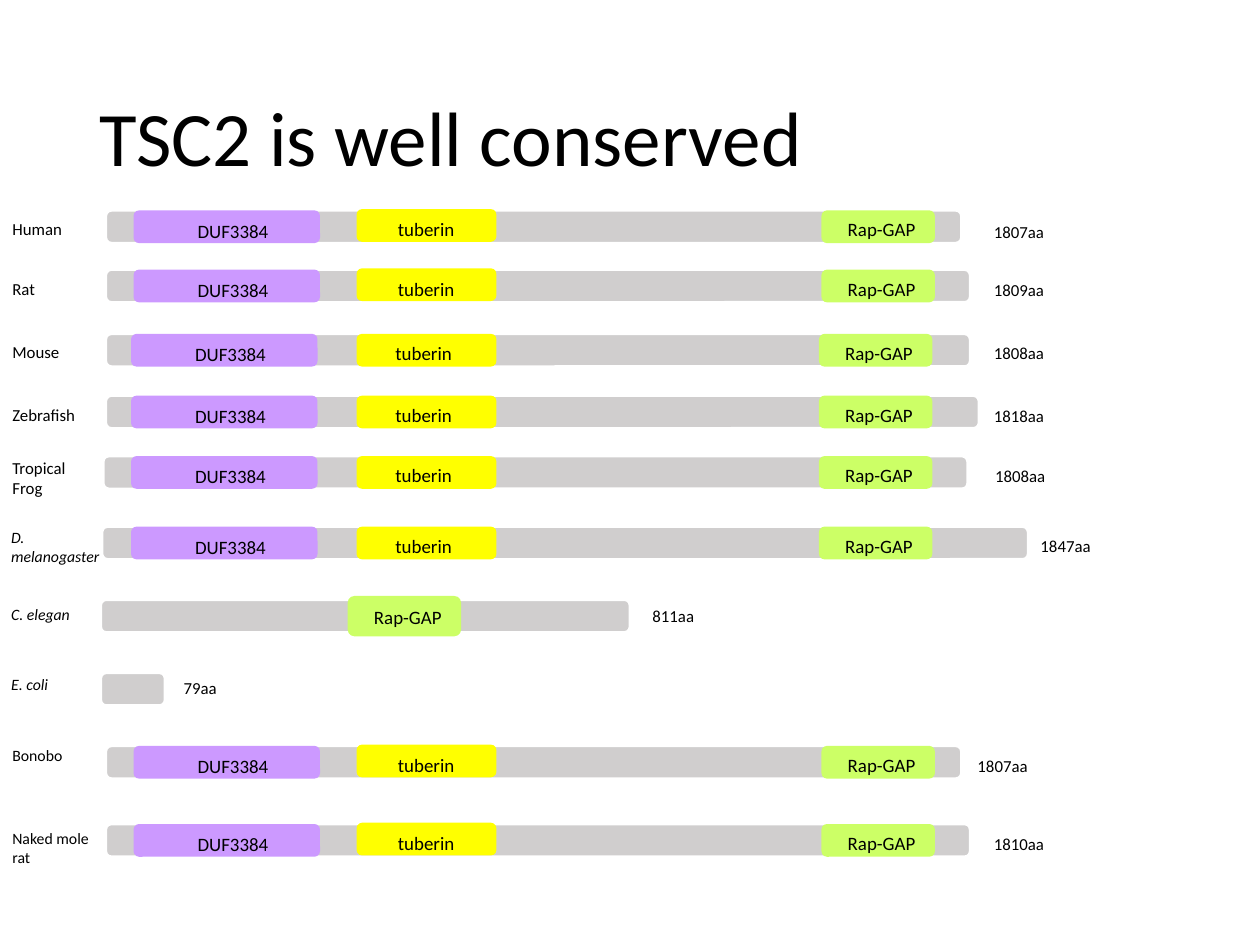
from dataclasses import dataclass

from pptx import Presentation
from pptx.dml.color import RGBColor
from pptx.enum.shapes import MSO_SHAPE
from pptx.enum.text import MSO_ANCHOR, MSO_AUTO_SIZE
from pptx.util import Inches, Pt

COLORS = {"bar": "D0CECE", "duf": "CC99FF", "tuberin": "FFFF00",
          "rap": "CCFF66", "outline": "FFFFFF", "text": "000000"}
BAR_H = 0.26


@dataclass
class Domain:
    name: str
    color: str
    left: float
    width: float
    text_dx: float
    text_dy: float
    moves: bool = True


@dataclass
class Protein:
    species: str
    length: str
    left: float
    top: float
    width: float
    label_top: float
    length_left: float
    length_top: float
    shift: float = 0
    label_size: float = 9.6
    italic: bool = False
    conserved: bool = True


DUF = Domain("DUF3384", "duf", 1.06, 1.48, 0.41, 0.02)
TUBERIN = Domain("tuberin", "tuberin", 2.83, 1.11, 0.23, 0.01, False)
RAP_GAP = Domain("Rap-GAP", "rap", 6.52, 0.9, 0.11, 0.01)

PROTEINS = [
    Protein("Human", "1807aa", 0.84, 1.67, 6.79, 1.69, 7.79, 1.71),
    Protein("Rat", "1809aa", 0.84, 2.14, 6.86, 2.16, 7.79, 2.17),
    Protein("Mouse", "1808aa", 0.84, 2.65, 6.86, 2.66, 7.79, 2.67, -0.02),
    Protein("Zebrafish", "1818aa", 0.84, 3.14, 6.93, 3.16, 7.79, 3.17, -0.02),
    Protein("Tropical\nFrog", "1808aa", 0.82, 3.62, 6.86, 3.58, 7.8, 3.65, -0.02),
    Protein("D. melanogaster", "1847aa", 0.81, 4.18, 7.35, 4.14, 8.16, 4.2,
            -0.02, 9, True),
    Protein("C. elegan", "811aa", 0.8, 4.76, 4.2, 4.75, 5.08, 4.76,
            0, 9, True, False),
    Protein("E. coli", "79aa", 0.8, 5.34, 0.51, 5.31, 1.36, 5.33,
            0, 9, True, False),
    Protein("Bonobo", "1807aa", 0.84, 5.92, 6.79, 5.87, 7.66, 5.95, 0, 9),
    Protein("Naked mole rat", "1810aa", 0.84, 6.54, 6.86, 6.53, 7.79, 6.57, 0, 9),
]


def add_text(s, text: str, left: float, top: float, width: float, height: float,
             size: float, italic: bool = False):
    sp = s.shapes.add_textbox(Inches(left), Inches(top), Inches(width), Inches(height))
    tf = sp.text_frame
    tf.word_wrap = True
    tf.auto_size = MSO_AUTO_SIZE.SHAPE_TO_FIT_TEXT
    tf.text = text
    font_format = {"name": "Calibri", "size": Pt(size), "italic": italic}
    for p in tf.paragraphs:
        for r in p.runs:
            for key, value in font_format.items():
                setattr(r.font, key, value)
            r.font.color.rgb = RGBColor.from_string(COLORS["text"])
    return tf


def add_block(s, color: str, left: float, top: float, width: float, height: float):
    sp = s.shapes.add_shape(MSO_SHAPE.ROUNDED_RECTANGLE, Inches(left), Inches(top),
                            Inches(width), Inches(height))
    sp.shadow.inherit = False
    sp.fill.solid()
    sp.fill.fore_color.rgb = RGBColor.from_string(COLORS[color])
    sp.line.fill.background()
    return sp


def add_domain(s, domain: Domain, top: float, shift: float) -> None:
    left = domain.left + (shift if domain.moves else 0)
    block_top = top if domain.moves or shift else top - 0.01
    add_block(s, domain.color, left, block_top, domain.width, BAR_H)
    add_text(s, domain.name, domain.left + shift + domain.text_dx,
             top + domain.text_dy, 1.06, 0.28, 10.8)


def add_protein(s, protein: Protein) -> None:
    bar = add_block(s, "bar", protein.left, protein.top, protein.width, BAR_H)
    bar.line.color.rgb = RGBColor.from_string(COLORS["outline"])
    bar.line.width = Pt(1.5)
    if protein.conserved:
        for domain in (DUF, TUBERIN, RAP_GAP):
            add_domain(s, domain, protein.top, protein.shift)
    add_text(s, protein.species, -0.01 if protein.italic else 0, protein.label_top,
             0.94, 0.26, protein.label_size, protein.italic)
    add_text(s, protein.length, protein.length_left, protein.length_top,
             0.84, 0.26, 9.6)


def main() -> None:
    prs = Presentation()
    prs.slide_width, prs.slide_height = Inches(10), Inches(7.5)
    s = prs.slides.add_slide(prs.slide_layouts[6])

    tf = add_text(s, "TSC2 is well conserved", 0.69, 0.4, 8.62, 1.45, 44)
    tf.auto_size = MSO_AUTO_SIZE.NONE
    tf.vertical_anchor = MSO_ANCHOR.MIDDLE
    tf.paragraphs[0].line_spacing = 0.9

    for protein in PROTEINS:
        add_protein(s, protein)

    add_block(s, RAP_GAP.color, 2.76, 4.73, RAP_GAP.width, 0.32)
    add_text(s, RAP_GAP.name, 2.87, 4.76, 1.06, 0.28, 10.8)

    prs.save("out.pptx")


if __name__ == "__main__":
    main()
